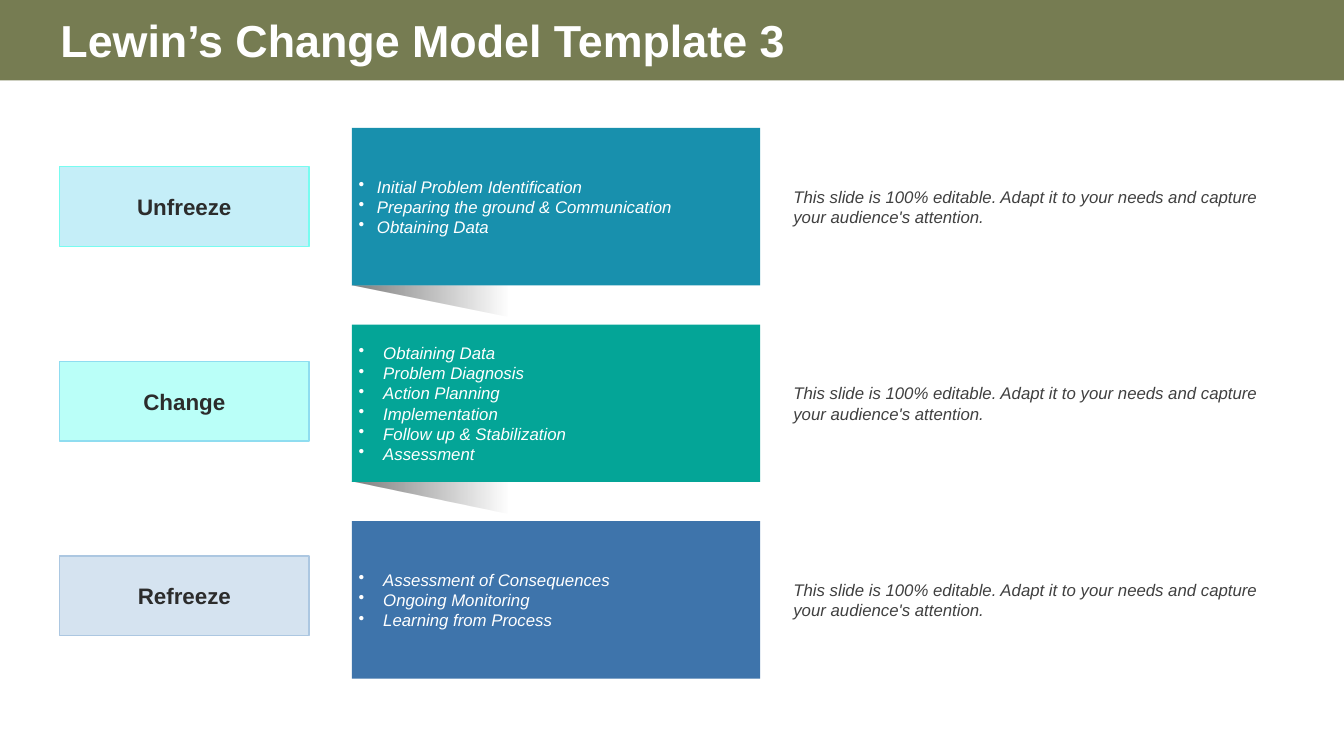
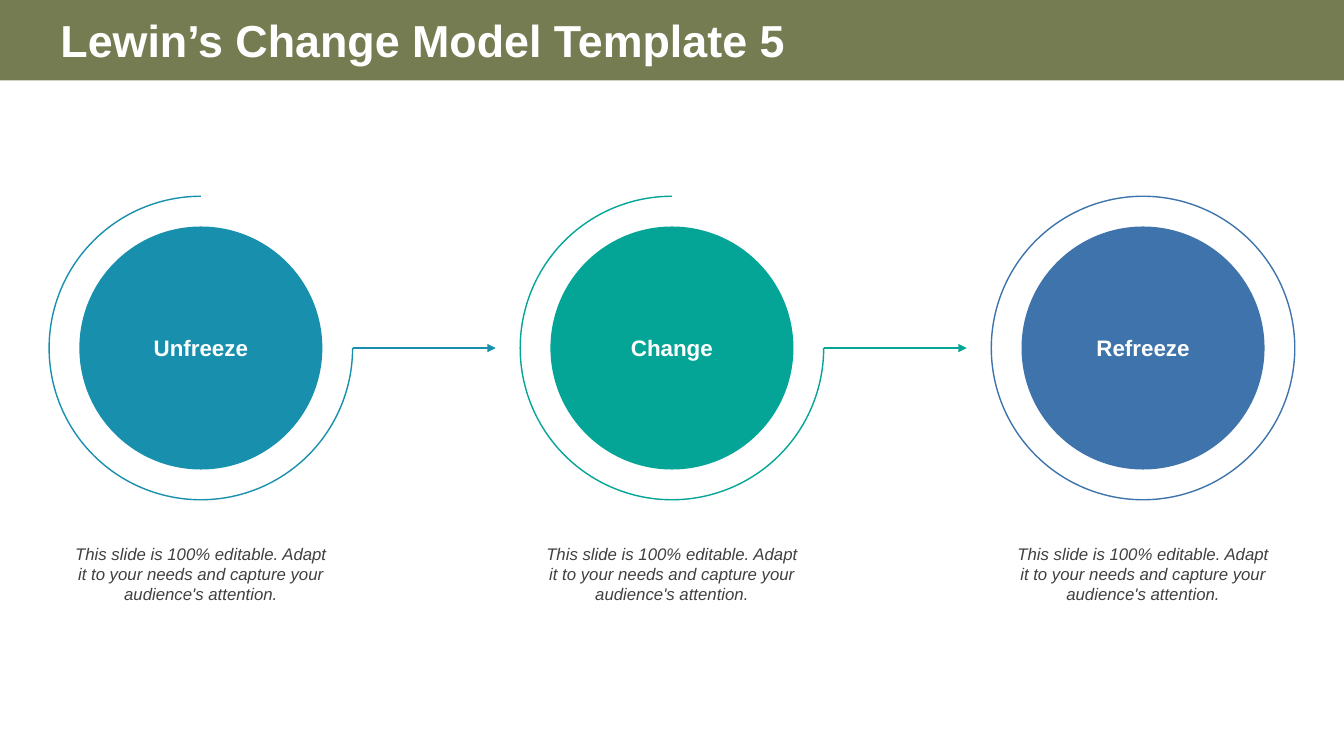
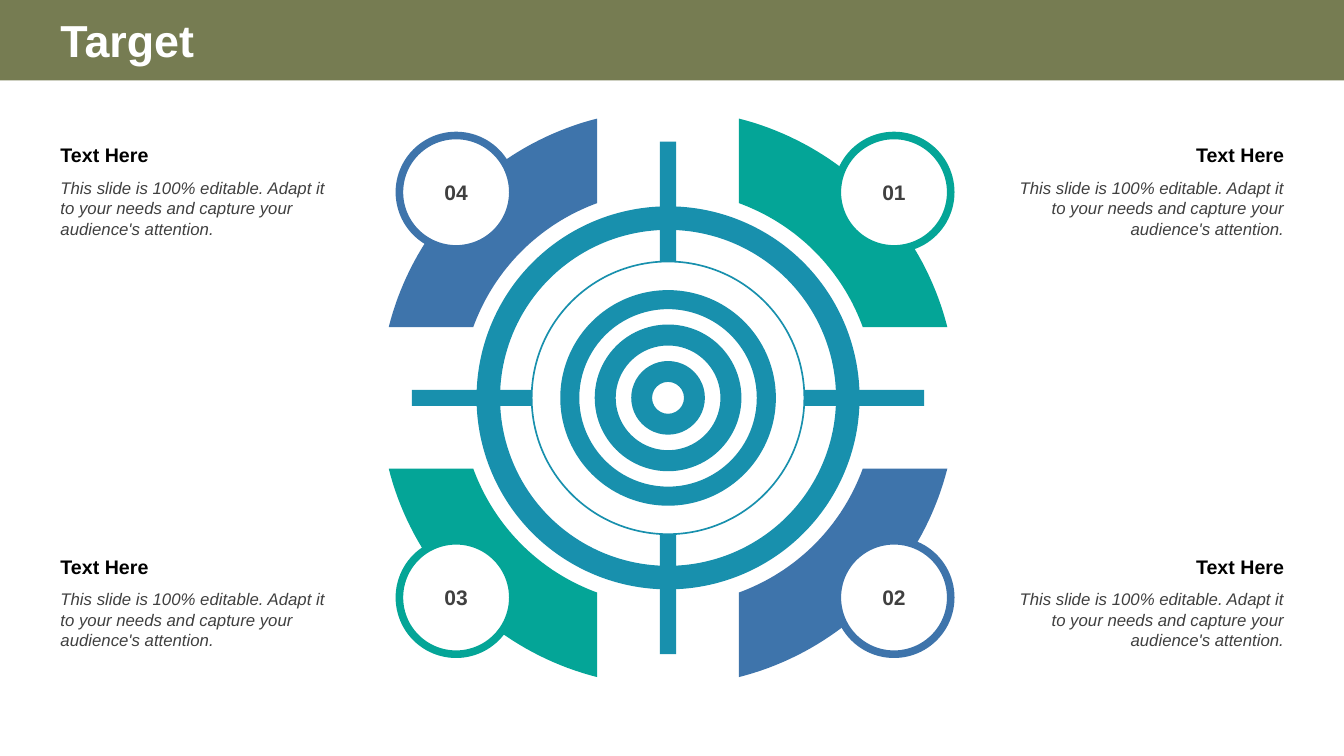
from math import asin, cos, pi, sin

from lxml.etree import SubElement
from pptx import Presentation
from pptx.dml.color import RGBColor
from pptx.enum.shapes import MSO_CONNECTOR, MSO_SHAPE
from pptx.enum.text import MSO_ANCHOR, MSO_AUTO_SIZE, PP_ALIGN
from pptx.oxml.ns import qn
from pptx.util import Pt

RECTANGLE, OVAL = MSO_SHAPE.RECTANGLE, MSO_SHAPE.OVAL
ARC, DONUT = MSO_SHAPE.ARC, MSO_SHAPE.DONUT
STRAIGHT = MSO_CONNECTOR.STRAIGHT
LEFT, CENTER, RIGHT = PP_ALIGN.LEFT, PP_ALIGN.CENTER, PP_ALIGN.RIGHT
TOP, MIDDLE = MSO_ANCHOR.TOP, MSO_ANCHOR.MIDDLE
NO_FIT = MSO_AUTO_SIZE.NONE

FONT = "Arial"
WIDTH, HEIGHT = 960, 540
TITLE_ONLY = 5
COLORS = {
    "band": "767C52", "white": "FFFFFF", "black": "000000",
    "note": "404040", "label": "2C2C2C",
    "blue": "1890AD", "teal": "04A597", "indigo": "3E74AB",
    "pale_blue": "C5EEF8", "pale_teal": "BAFFF8", "pale_indigo": "D5E3F0",
    "edge_blue": "78FCF0", "edge_teal": "8FDDF0", "edge_indigo": "ACC7E1",
}
NOTE = ("This slide is 100% editable. Adapt it to your needs "
        "and capture your audience's attention.")
STAGES = [
    ("Unfreeze", "blue", 13,
     ["Initial Problem Identification", "Preparing the ground & Communication",
      "Obtaining Data"]),
    ("Change", "teal", 17.5,
     ["Obtaining Data", "Problem Diagnosis", "Action Planning",
      "Implementation", "Follow up & Stabilization", "Assessment"]),
    ("Refreeze", "indigo", 17.5,
     ["Assessment of Consequences", "Ongoing Monitoring",
      "Learning from Process"]),
]


def rgb(name):
    """Return the named colour."""
    return RGBColor.from_string(COLORS[name])


def style_shape(shape, fill=None, line=None, weight=1):
    """Set fill and outline and drop the shadow."""
    shape.shadow.inherit = False
    if fill:
        shape.fill.solid()
        shape.fill.fore_color.rgb = rgb(fill)
    else:
        shape.fill.background()
    if line:
        shape.line.color.rgb = rgb(line)
        shape.line.width = Pt(weight)
    else:
        shape.line.fill.background()


def add_shape(page, kind, box, fill=None, line=None, weight=1):
    """Add a styled preset shape in a box of left, top, width, height."""
    shape = page.shapes.add_shape(kind, *map(Pt, box))
    style_shape(shape, fill, line, weight)
    return shape


def add_circle(page, kind, center, radius, fill=None, line=None, weight=1):
    """Add a round shape around a center."""
    x, y = center
    box = (x - radius, y - radius, 2 * radius, 2 * radius)
    return add_shape(page, kind, box, fill, line, weight)


def format_para(para, size, color, bold=False, italic=False, align=LEFT):
    """Set the alignment of a paragraph and the font of its runs."""
    para.alignment = align
    for span in para.runs:
        span.font.name = FONT
        span.font.size = Pt(size)
        span.font.bold = bold
        span.font.italic = italic
        span.font.color.rgb = rgb(color)


def write(shape, text, size, color, anchor=MIDDLE, **style):
    """Write text in a shape, one paragraph per line."""
    frame = shape.text_frame
    frame.word_wrap = True
    frame.auto_size = NO_FIT
    frame.vertical_anchor = anchor
    frame.margin_left = frame.margin_right = Pt(5)
    frame.margin_top = frame.margin_bottom = Pt(3)
    frame.text = text
    for para in frame.paragraphs:
        format_para(para, size, color, **style)
    return frame


def add_note(page, box, align=LEFT, anchor=TOP):
    """Add the italic note in a text box."""
    note = page.shapes.add_textbox(*map(Pt, box))
    write(note, NOTE, 12, "note", anchor, italic=True, align=align)


def add_page(deck, title):
    """Add a title-only page with its title on the band."""
    page = deck.slides.add_slide(deck.slide_layouts[TITLE_ONLY])
    box = page.shapes.title
    box.left, box.top, box.width, box.height = map(Pt, (36, 0, 790, 56))
    frame = write(box, title, 32, "white", bold=True)
    frame.margin_left = Pt(7.2)
    return page


def add_band(page):
    """Put the title band on the layout of a page."""
    layout = page.slide_layout
    for holder in list(layout.placeholders)[1:]:
        holder.element.getparent().remove(holder.element)
    band = add_shape(page, RECTANGLE, (0, 0, WIDTH, 57.4), "band")
    layout.shapes.element.insert(2, band.element)


def add_card_shadow(page, left, top):
    """Add the fading wedge under a card."""
    builder = page.shapes.build_freeform(Pt(left), Pt(top))
    corners = [(left + 128, top), (left + 114.5, top + 23)]
    builder.add_line_segments([(Pt(x), Pt(y)) for x, y in corners])
    wedge = builder.convert_to_shape()
    style_shape(wedge)
    wedge.fill.gradient()
    wedge.fill.gradient_angle = 0
    for stop, position in zip(wedge.fill.gradient_stops, (0, 0.87)):
        stop.color.rgb = rgb("black")
        stop.position = position
    tints = wedge.element.spPr.iter(qn("a:srgbClr"))
    for tint, opacity in zip(list(tints), ("51000", "0")):
        SubElement(tint, qn("a:alpha"), val=opacity)


def add_card(page, box, color, indent, lines):
    """Add a filled card with a bulleted list."""
    card = add_shape(page, RECTANGLE, box, color)
    frame = write(card, "\n".join(lines), 12, "white", italic=True)
    for para in frame.paragraphs:
        properties = para._p.get_or_add_pPr()
        properties.set("marL", str(Pt(indent)))
        properties.set("indent", str(-Pt(indent)))
        SubElement(properties, qn("a:buChar"), char="•")


def add_stage_rows(page, left, top):
    """Add a row of label, card and note for each stage."""
    card_left, card_width, card_height, pitch = left + 208.8, 291.8, 112.5, 140.4
    for index, (name, color, indent, lines) in enumerate(STAGES):
        y = top + index * pitch
        label_box = (left, top + 27.5 + index * 139.1, 178.4, 57)
        label = add_shape(page, RECTANGLE, label_box,
                          "pale_" + color, "edge_" + color)
        write(label, name, 16, "label", bold=True, align=CENTER)
        if index < len(STAGES) - 1:
            add_card_shadow(page, card_left, y + card_height)
        add_card(page, (card_left, y, card_width, card_height),
                 color, indent, lines)
        add_note(page, (left + 519.2, y, 355.7, card_height), anchor=MIDDLE)


def add_arrow(page, start, length, color):
    """Add a level arrow to the right."""
    x, y = start
    arrow = page.shapes.add_connector(STRAIGHT, Pt(x), Pt(y), Pt(x + length), Pt(y))
    arrow.line.color.rgb = rgb(color)
    arrow.line.width = Pt(1)
    outline = arrow.element.spPr.find(qn("a:ln"))
    SubElement(outline, qn("a:tailEnd"), type="triangle")
    SubElement(arrow.element.spPr, qn("a:effectLst"))


def add_stage_circle(page, center, name, color, last):
    """Add a ringed disc with its note, and an arrow unless it is last."""
    x, y = center
    radius = 108.4
    ring = add_circle(page, OVAL if last else ARC, center, radius, line=color)
    if not last:
        ring.adjustments[0] = 0
        ring.adjustments[1] = 162
        add_arrow(page, (x + radius, y), 102.2, color)
    disc = add_circle(page, OVAL, center, 86.8, color)
    write(disc, name, 16, "white", bold=True, align=CENTER)
    add_note(page, (x - 96, y + 136.6, 192, 64), CENTER)


def add_crosshair(page, center):
    """Add the rings and the four arms of the target."""
    x, y = center
    for outer, inner in [(136.8, 120), (77, 63.4), (52.4, 37.4), (26.3, 11.4)]:
        ring = add_circle(page, DONUT, center, outer, "blue")
        ring.adjustments[0] = (outer - inner) / (2 * outer)
    add_circle(page, OVAL, center, 97.4, line="blue", weight=1.2)
    near, far, thick = 97.4, 183, 11.5
    for start in (-far, near):
        add_shape(page, RECTANGLE,
                  (x + start, y - thick / 2, far - near, thick), "blue")
        add_shape(page, RECTANGLE,
                  (x - thick / 2, y + start, thick, far - near), "blue")


def add_blade(page, center, side, level, color):
    """Add a ring sector cut parallel to the arms in one quadrant."""
    x, y = center
    outer, inner, gap, steps = 205.8, 148, 50.6, 40

    def arc(radius):
        """Return points of an arc between the two cuts."""
        first = asin(gap / radius)
        turn = (pi / 2 - 2 * first) / steps
        angles = [first + step * turn for step in range(steps + 1)]
        return [(Pt(x + side * radius * cos(angle)),
                 Pt(y + level * radius * sin(angle))) for angle in angles]

    points = arc(outer) + arc(inner)[::-1]
    builder = page.shapes.build_freeform(*points[0])
    builder.add_line_segments(points[1:])
    style_shape(builder.convert_to_shape(), color)


def add_target_text(page, box, align):
    """Add a heading with the note below it."""
    area = page.shapes.add_textbox(*map(Pt, box))
    frame = write(area, "Text Here\n" + NOTE, 12, "note", TOP,
                  italic=True, align=align)
    heading, note = frame.paragraphs
    format_para(heading, 14, "black", bold=True, align=align)
    note.space_before = Pt(8)


def add_target(page, center):
    """Add the crosshair and its four numbered corners."""
    x, y = center
    add_crosshair(page, center)
    corners = [("01", 1, -1, "teal"), ("02", 1, 1, "indigo"),
               ("03", -1, 1, "teal"), ("04", -1, -1, "indigo")]
    for number, side, level, color in corners:
        add_blade(page, center, side, level, color)
        badge_center = (x + (141.4 if side > 0 else -151.4) + (20 if side > 0 else 0),
                        y + (142.6 if level > 0 else -146.9))
        badge = add_circle(page, OVAL, badge_center, 40.5, "white", color, 5.4)
        write(badge, number, 15, "note", bold=True, align=CENTER)
        text_left = 715.7 if side > 0 else 38.2
        text_top = y + (108.8 if level > 0 else -184.9)
        add_target_text(page, (text_left, text_top, 206.6, 76.5),
                        RIGHT if side > 0 else LEFT)


def main():
    """Build and save the deck."""
    deck = Presentation()
    deck.slide_width, deck.slide_height = Pt(WIDTH), Pt(HEIGHT)

    page = add_page(deck, "Lewin’s Change Model Template 3")
    add_band(page)
    add_stage_rows(page, 42.5, 91.4)

    page = add_page(deck, "Lewin’s Change Model Template 5")
    for index, (name, color, _, _) in enumerate(STAGES):
        center = (143.5 + index * 336.5, 248.6)
        add_stage_circle(page, center, name, color, index == len(STAGES) - 1)

    page = add_page(deck, "Target")
    add_target(page, (477.2, 284.2))

    deck.save("out.pptx")


if __name__ == "__main__":
    main()
